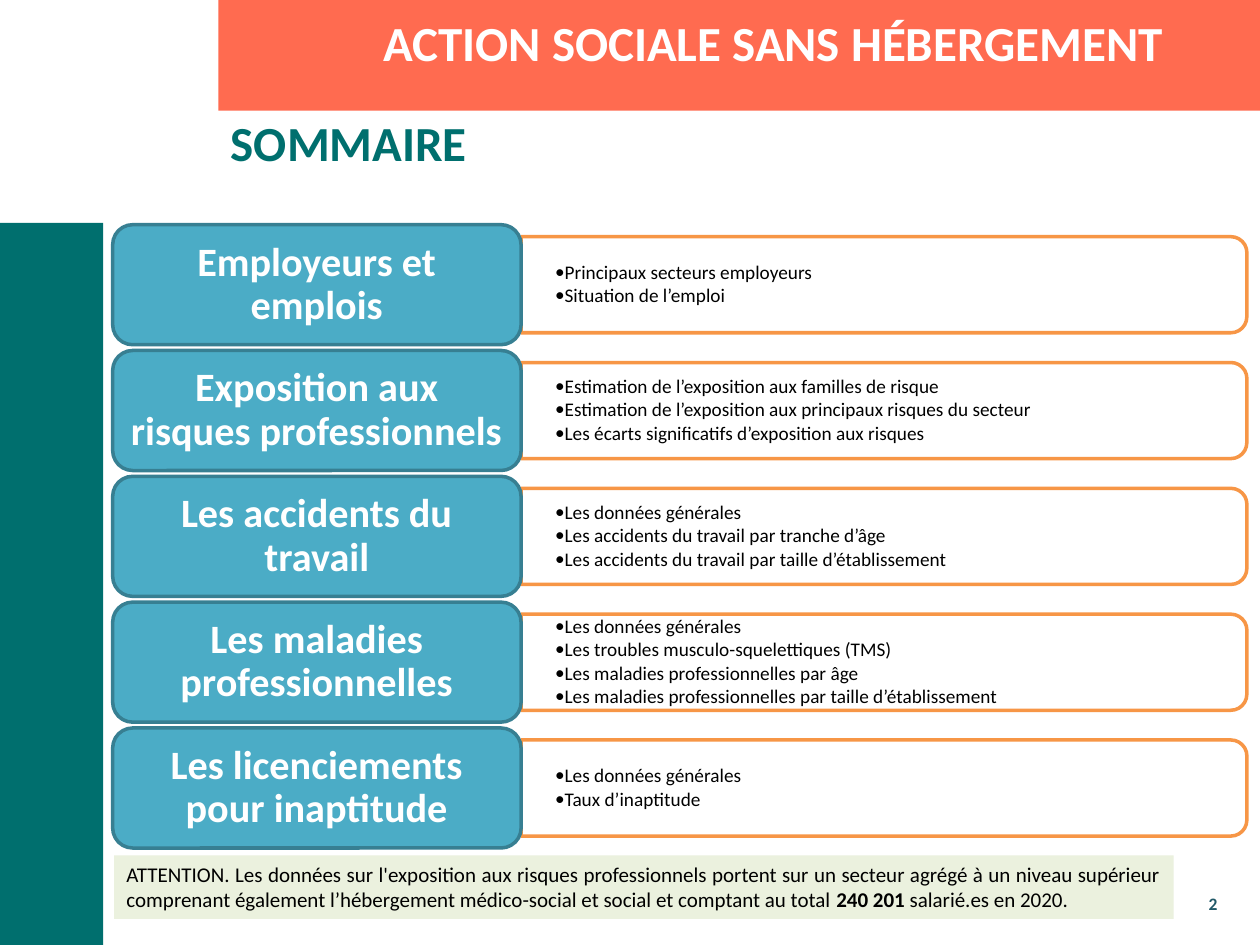
from lxml.etree import SubElement
from pptx import Presentation
from pptx.dml.color import RGBColor
from pptx.enum.shapes import MSO_SHAPE as Shape
from pptx.enum.text import MSO_ANCHOR as Anchor, PP_ALIGN as Align
from pptx.oxml.ns import qn
from pptx.util import Pt

TITLE = "ACTION SOCIALE SANS HÉBERGEMENT"
HEADING = "SOMMAIRE"
SECTIONS = [
    ("Employeurs et emplois", [
        "Principaux secteurs employeurs",
        "Situation de l’emploi",
    ]),
    ("Exposition aux risques professionnels", [
        "Estimation de l’exposition aux familles de risque",
        "Estimation de l’exposition aux principaux risques du secteur",
        "Les écarts significatifs d’exposition aux risques",
    ]),
    ("Les accidents du travail", [
        "Les données générales",
        "Les accidents du travail par tranche d’âge",
        "Les accidents du travail par taille d’établissement",
    ]),
    ("Les maladies professionnelles", [
        "Les données générales",
        "Les troubles musculo-squelettiques (TMS)",
        "Les maladies professionnelles par âge",
        "Les maladies professionnelles par taille d’établissement",
    ]),
    ("Les licenciements pour inaptitude", [
        "Les données générales",
        "Taux d’inaptitude",
    ]),
]
NOTE = [
    ("ATTENTION. Les données sur l'exposition aux risques professionnels portent "
     "sur un secteur agrégé à un niveau supérieur comprenant également "
     "l’hébergement médico-social et social et comptant au total ", False),
    ("240 201", True),
    (" salarié.es en 2020.", False),
]
PAGE_NUMBER = "2"

FONT = "Calibri"
WHITE = RGBColor(0xFF, 0xFF, 0xFF)
BLACK = RGBColor(0x00, 0x00, 0x00)
CORAL = RGBColor(0xFF, 0x6B, 0x50)
GREEN = RGBColor(0x00, 0x6F, 0x6E)
NAVY = RGBColor(0x21, 0x59, 0x68)
BLUE = RGBColor(0x4B, 0xAC, 0xC6)
BLUE_EDGE = RGBColor(0x37, 0x7F, 0x92)
ORANGE = RGBColor(0xF7, 0x96, 0x46)
PALE = RGBColor(0xEB, 0xF1, 0xDE)

PAGE_W, PAGE_H = 720, 540
BAND_LEFT = 124.8
LABEL_LEFT, LABEL_TOP, LABEL_W, LABEL_H = 64.4, 128.4, 233.4, 68.6
PITCH = 71.9
PANEL_W, PANEL_H = 414.7, 54.9
BULLET_INDENT = 4.5


def add_block(page, kind, left, top, width, height, fill, line=None):
    block = page.shapes.add_shape(kind, Pt(left), Pt(top), Pt(width), Pt(height))
    block.shadow.inherit = False
    block.fill.solid()
    block.fill.fore_color.rgb = fill
    if line is None:
        block.line.fill.background()
    else:
        block.line.color.rgb = line
        block.line.width = Pt(2)
    return block


def add_box(page, left, top, width, height):
    return page.shapes.add_textbox(Pt(left), Pt(top), Pt(width), Pt(height))


def add_bullet(para, size):
    para.level = 1
    props = para._p.get_or_add_pPr()
    props.set("marL", str(Pt(BULLET_INDENT)))
    props.set("indent", str(-Pt(BULLET_INDENT)))
    SubElement(props, qn("a:buSzPct")).set("val", "100000")
    SubElement(props, qn("a:buFont")).set("typeface", FONT)
    SubElement(props, qn("a:buChar")).set("char", "•")
    para.font.size = Pt(size)
    para.font.name = FONT


def write(shape, paragraphs, size, color, bold=False, align=Align.LEFT,
          anchor=Anchor.TOP, insets=(7.2, 3.6), spacing=None, after=None, bullets=False):
    frame = shape.text_frame
    frame.word_wrap = True
    frame.vertical_anchor = anchor
    frame.margin_left = frame.margin_right = Pt(insets[0])
    frame.margin_top = frame.margin_bottom = Pt(insets[1])
    for index, content in enumerate(paragraphs):
        para = frame.add_paragraph() if index else frame.paragraphs[0]
        if bullets:
            add_bullet(para, size)
        para.alignment = align
        if spacing is not None:
            para.line_spacing = spacing
        if after is not None:
            para.space_after = Pt(after)
        spans = [(content, bold)] if isinstance(content, str) else content
        for text, is_bold in spans:
            span = para.add_run()
            span.text = text
            span.font.name = FONT
            span.font.size = Pt(size)
            span.font.bold = is_bold
            span.font.color.rgb = color
        if bullets:
            SubElement(para._p, qn("a:endParaRPr")).set("sz", str(size * 100))


def add_section(page, top, label, topics):
    panel_left = LABEL_LEFT + LABEL_W
    middle = top + LABEL_H / 2
    panel = add_block(page, Shape.ROUND_2_SAME_RECTANGLE,
                      panel_left + (PANEL_W - PANEL_H) / 2, middle - PANEL_W / 2,
                      PANEL_H, PANEL_W, WHITE, ORANGE)
    panel.rotation = 90
    topic_box = add_box(page, panel_left, middle - 24.8, 412, 49.6)
    write(topic_box, topics, 11, BLACK, anchor=Anchor.MIDDLE, insets=(19.4, 10),
          spacing=0.9, after=1.6, bullets=True)
    tile = add_block(page, Shape.ROUNDED_RECTANGLE, LABEL_LEFT, top,
                     LABEL_W, LABEL_H, BLUE, BLUE_EDGE)
    write(tile, [label], 23, WHITE, bold=True, align=Align.CENTER,
          anchor=Anchor.MIDDLE, insets=(7, 3.6), spacing=0.9)


def main():
    deck = Presentation()
    deck.slide_width, deck.slide_height = Pt(PAGE_W), Pt(PAGE_H)
    page = deck.slides.add_slide(deck.slide_layouts[6])

    add_block(page, Shape.RECTANGLE, BAND_LEFT, 0, PAGE_W - BAND_LEFT, 63.2, CORAL)
    write(add_box(page, 629.3, 506.9, 73.4, 23), [PAGE_NUMBER], 10, NAVY, bold=True,
          align=Align.RIGHT)
    add_block(page, Shape.RECTANGLE, 0, 127.4, 59, PAGE_H - 127.4, GREEN)
    write(add_box(page, BAND_LEFT, 60.8, 594, 61.2), [HEADING], 28, GREEN, bold=True)

    for row, (label, topics) in enumerate(SECTIONS):
        add_section(page, LABEL_TOP + row * PITCH, label, topics)

    note = add_block(page, Shape.RECTANGLE, 65.2, 488.8, 605.5, 36.3, PALE)
    write(note, [NOTE], 12, BLACK, align=Align.JUSTIFY)
    write(add_box(page, 163.4, 3.8, 556.6, 41.2), [TITLE], 28, WHITE, bold=True,
          align=Align.CENTER)
    deck.save("out.pptx")


if __name__ == "__main__":
    main()
